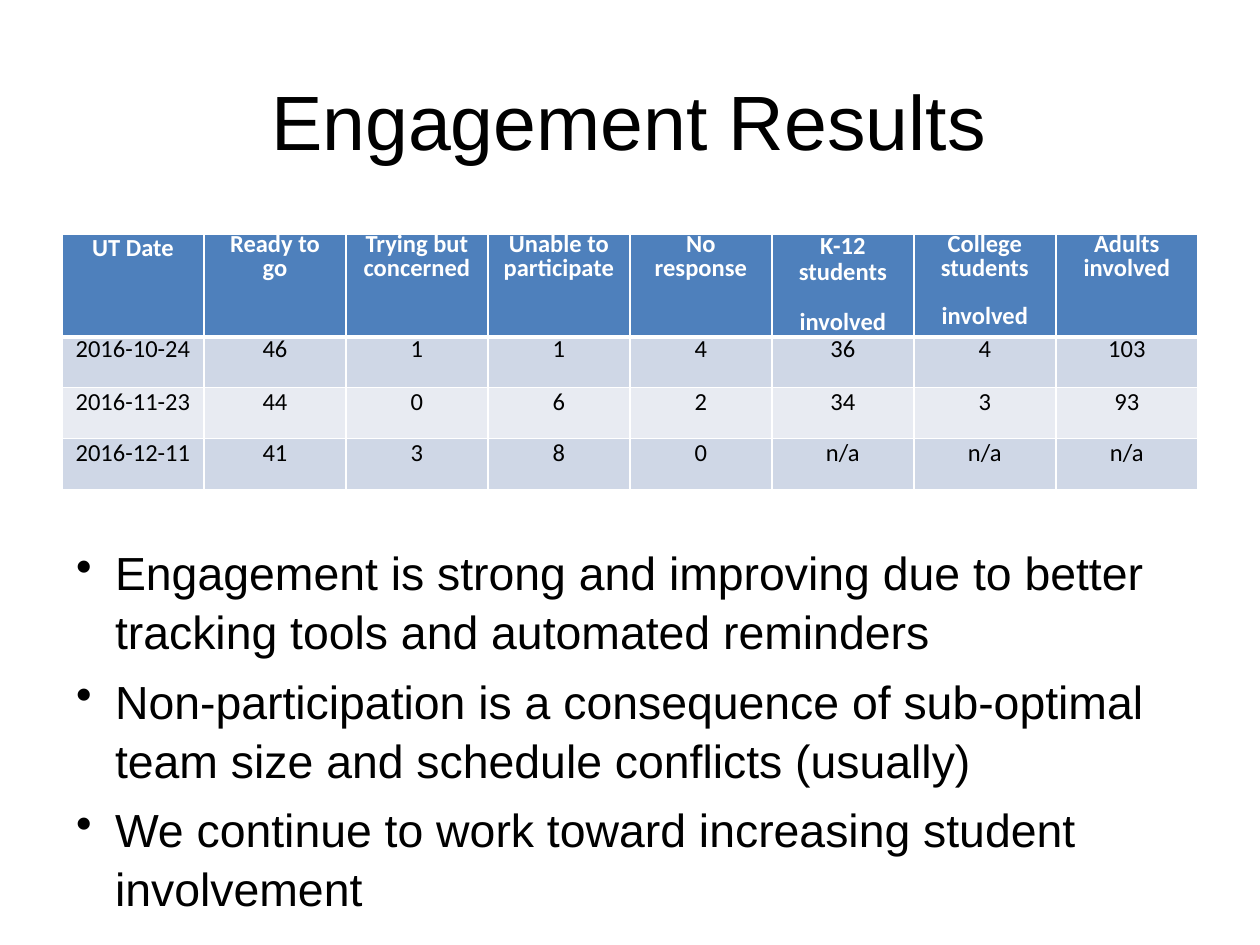
import lxml.etree
import pptx
import pptx.dml.color
import pptx.enum.text
import pptx.oxml.ns
import pptx.util

BLACK = pptx.dml.color.RGBColor(0x00, 0x00, 0x00)
WHITE = pptx.dml.color.RGBColor(0xFF, 0xFF, 0xFF)
BLUE = pptx.dml.color.RGBColor(0x4E, 0x80, 0xBC)
BAND_DARK = pptx.dml.color.RGBColor(0xCF, 0xD7, 0xE6)
BAND_LIGHT = pptx.dml.color.RGBColor(0xE8, 0xEB, 0xF2)

HEADERS = [
    ("UT Date", 16.6),
    ("Ready to\vgo", 14.1),
    ("Trying but\vconcerned", 14.1),
    ("Unable to\vparticipate", 14.1),
    ("No\vresponse", 14.1),
    ("K-12\vstudents\ninvolved", 15.2),
    ("College\vstudents\ninvolved", 14.1),
    ("Adults\vinvolved", 14.1),
]
RESULTS = [
    ("2016-10-24", "46", "1", "1", "4", "36", "4", "103"),
    ("2016-11-23", "44", "0", "6", "2", "34", "3", "93"),
    ("2016-12-11", "41", "3", "8", "0", "n/a", "n/a", "n/a"),
]
FINDINGS = [
    "Engagement is strong and improving due to better tracking tools and automated reminders",
    "Non-participation is a consequence of sub-optimal team size and schedule conflicts (usually)",
    "We continue to work toward increasing student involvement",
]


def px(length):
    return pptx.util.Inches(length / 126)


class SlideBuilder:
    """Holds the style and the current slide, and adds each kind of element."""

    text_font = "Arial"
    table_font = "Calibri"

    def __init__(self, deck):
        self.slide = deck.slides.add_slide(deck.slide_layouts[6])

    def style(self, para, name, size, color, bold=False):
        para.font.name = name
        para.font.size = pptx.util.Pt(size)
        para.font.color.rgb = color
        para.font.bold = bold

    def text_frame(self, left, top, width, height):
        frame = self.slide.shapes.add_textbox(px(left), px(top), px(width), px(height)).text_frame
        frame.word_wrap = True
        frame.margin_left = frame.margin_top = frame.margin_right = frame.margin_bottom = 0
        return frame

    def title(self, text, left, top, width, height):
        frame = self.text_frame(left, top, width, height)
        frame.margin_top = px(9)
        frame.vertical_anchor = pptx.enum.text.MSO_ANCHOR.MIDDLE
        para = frame.paragraphs[0]
        para.text = text
        para.alignment = pptx.enum.text.PP_ALIGN.CENTER
        self.style(para, self.text_font, 44, BLACK)

    def bullets(self, texts, left, top, width, height):
        frame = self.text_frame(left, top, width, height)
        frame.text = "\n".join(texts)
        for index, para in enumerate(frame.paragraphs):
            self.style(para, self.text_font, 26.5, BLACK)
            para.line_spacing = 1.06
            para.space_before = pptx.util.Pt(6 if index else 0)
            properties = para._p.get_or_add_pPr()
            properties.set("marL", str(px(42)))
            properties.set("indent", str(px(-39)))
            bullet = lxml.etree.Element(pptx.oxml.ns.qn("a:buChar"), char="•")
            properties.insert_element_before(bullet, "a:tabLst", "a:defRPr")

    def borders(self, cell, top, bottom):
        properties = cell._tc.get_or_add_tcPr()
        widths = {"a:lnL": 0.9, "a:lnR": 0.9, "a:lnT": top, "a:lnB": bottom}
        for index, (tag, width) in enumerate(widths.items()):
            line = lxml.etree.Element(pptx.oxml.ns.qn(tag), w=str(pptx.util.Pt(width)))
            fill = lxml.etree.SubElement(line, pptx.oxml.ns.qn("a:solidFill"))
            lxml.etree.SubElement(fill, pptx.oxml.ns.qn("a:srgbClr"), val=str(WHITE))
            properties.insert(index, line)

    def cell(self, cell, text, pitch, fill, color, bold=False):
        cell.margin_left = cell.margin_top = cell.margin_right = cell.margin_bottom = 0
        cell.fill.solid()
        cell.fill.fore_color.rgb = fill
        lines = text.split("\n")
        for index, line in enumerate(lines):
            para = cell.text_frame.add_paragraph() if index else cell.text_frame.paragraphs[0]
            para.text = line
            para.alignment = pptx.enum.text.PP_ALIGN.CENTER
            para.line_spacing = pptx.util.Pt(pitch)
            para.space_before = pptx.util.Pt(13 if index else 0)
            self.style(para, self.table_font, 14, color, bold)

    def table(self, headers, results, left, top, column_width, header_height, row_height):
        table = self.slide.shapes.add_table(
            len(results) + 1, len(headers), px(left), px(top),
            px(column_width * len(headers)), px(header_height + row_height * len(results)),
        ).table
        for column in table.columns:
            column.width = px(column_width)
        for index, row in enumerate(table.rows):
            row.height = px(row_height if index else header_height)
        for column, (text, pitch) in enumerate(headers):
            cell = table.cell(0, column)
            self.cell(cell, text, pitch, BLUE, WHITE, bold=True)
            self.borders(cell, 0.8, 2.6)
        for row, values in enumerate(results, 1):
            for column, text in enumerate(values):
                cell = table.cell(row, column)
                fill = BAND_DARK if row % 2 else BAND_LIGHT
                self.cell(cell, text, 15.7 if row == 1 else 16.6, fill, BLACK)
                self.borders(cell, 2.6 if row == 1 else 0.8, 0.8)


def main():
    deck = pptx.Presentation()
    deck.slide_width = px(1260)
    deck.slide_height = px(945)
    page = SlideBuilder(deck)
    page.title("Engagement Results", 88, 60, 1082, 111)
    page.bullets(FINDINGS, 73, 541, 1090, 365)
    page.table(HEADERS, RESULTS, 62, 234, 142, 102, 51)
    deck.save("out.pptx")


if __name__ == "__main__":
    main()
